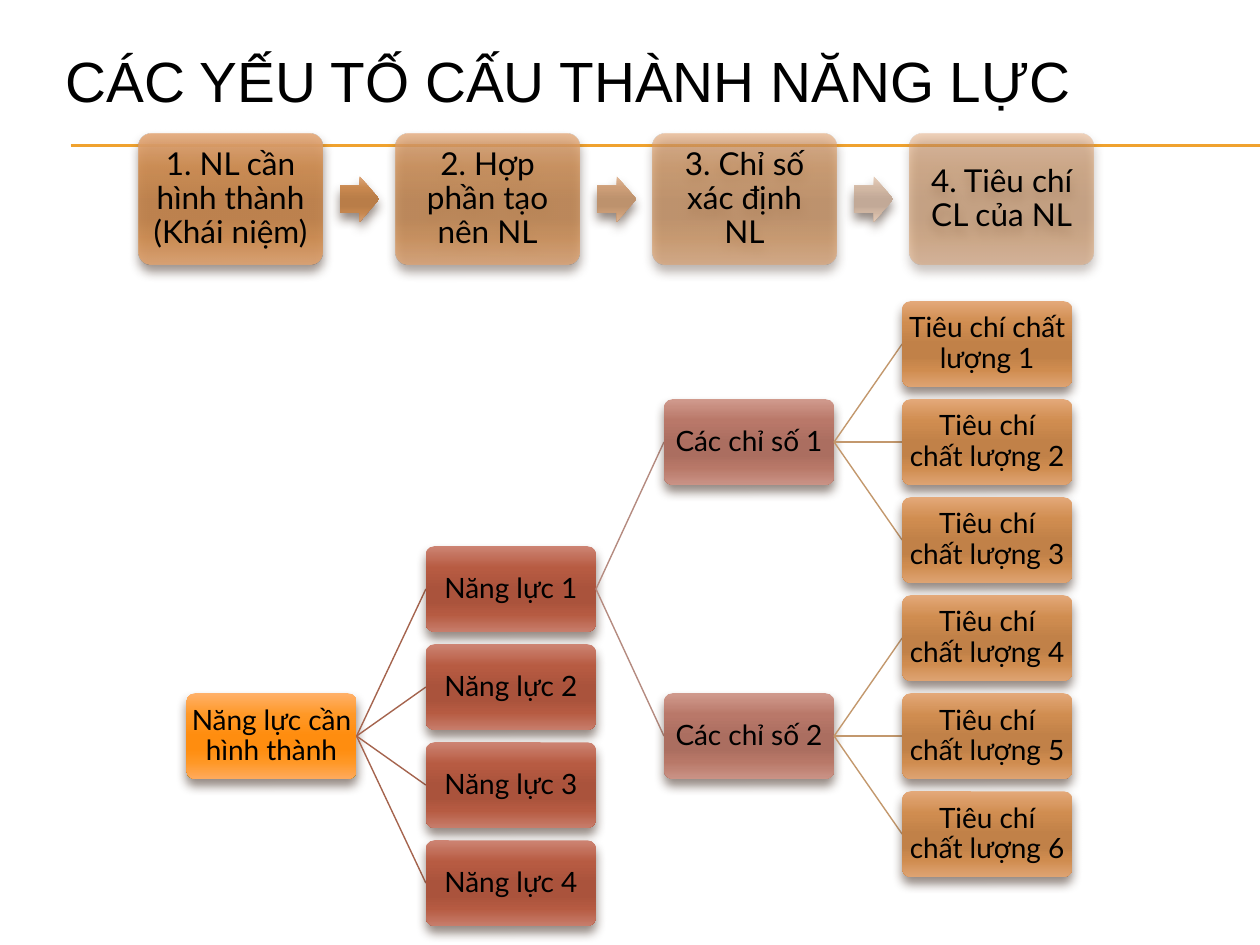
from typing import NamedTuple

from pptx import Presentation
from pptx.dml.color import RGBColor
from pptx.enum.shapes import MSO_CONNECTOR as Connector, MSO_SHAPE as Preset
from pptx.enum.text import MSO_ANCHOR as Anchor, PP_ALIGN as Align
from pptx.oxml import parse_xml
from pptx.oxml.ns import nsdecls, qn
from pptx.util import Inches, Pt


class Node(NamedTuple):
    text: str
    row: float
    children: tuple["Node", ...] = ()


class Level(NamedTuple):
    left: float
    colors: str
    link: str  # colour of the lines that lead into this level


class Step(NamedTuple):
    text: str
    opacity: int
    arrow: str  # gradient of the arrow that follows the step


STOPS = (0, 25, 50, 65, 80, 100)
TAN = "E4A97A D08D50 C18148 C18148 CF8C4F DEA372"

# Competency tree, placed on a grid of rows
NODE_W, NODE_H = 1.35, 0.68
TREE_TOP = 2.39
ROW_PITCH = (6.28 - TREE_TOP) / 5
LEVELS = (
    Level(1.48, "FFB16A FF9826 FF8D0F FF8D0F FF9724 FFAA5C", ""),
    Level(3.38, "CD8473 B75B42 AA533C AA533C B65B42 C77D6B", "A5644E"),
    Level(5.27, "D09A8D B97869 AB6E60 AB6E60 B87868 CA9386", "B58B80"),
    Level(7.16, TAN, "C3986D"),
)


def criteria(first: int) -> tuple[Node, ...]:
    """Three quality criteria; all but number 1 break after 'Tiêu chí'."""
    return tuple(
        Node(f"Tiêu chí{' ' if number == 1 else chr(11)}chất lượng {number}", number - 1)
        for number in range(first, first + 3)
    )


INDICATORS = (Node("Các chỉ số 1", 1, criteria(1)), Node("Các chỉ số 2", 4, criteria(4)))
TREE = Node("Năng lực cần hình thành", 4, (
    Node("Năng lực 1", 2.5, INDICATORS),
    *(Node(f"Năng lực {number}", number + 1.5) for number in (2, 3, 4)),
))

# Row of steps
STEP_LEFT, STEP_TOP, STEP_PITCH = 1.1, 1.06, 2.04
STEPS = (
    Step("1. NL cần hình thành (Khái niệm)", 90, "DCA67A C8884F B97D48 B97D48 C6874E D69F72"),
    Step("2. Hợp phần tạo nên NL", 77, "E2B998 CD9E78 BD926D BD926D CB9D77 DCB291"),
    Step("3. Chỉ số xác định NL", 63, "E7CFBD D2B8A4 C2A997 C2A997 D1B7A3 E1C9B7"),
    Step("4. Tiêu chí CL của NL", 50, ""),
)


def rgb(color: str) -> RGBColor:
    return RGBColor.from_string(color)


def write(shape, text: str, *, size: float, font: str = "Lato", inset: float = 0.1,
          align=Align.CENTER, spacing: float = 0.9) -> None:
    frame = shape.text_frame
    frame.word_wrap = True
    frame.vertical_anchor = Anchor.MIDDLE
    frame.margin_left = frame.margin_right = Inches(inset)
    frame.margin_top = frame.margin_bottom = Inches(min(inset, 0.07))
    para = frame.paragraphs[0]
    para.text = text
    para.alignment = align
    para.line_spacing = spacing
    for span in para.runs:
        span.font.size = Pt(size)
        span.font.name = font
        span.font.color.rgb = rgb("000000")


def add_glossy(slide, preset, left: float, top: float, width: float, height: float,
               colors: str, *, opacity: int = 100, adjust: tuple[float, ...] = (0.1,)):
    """Add a shape with a vertical gradient and a soft shadow below it."""
    shape = slide.shapes.add_shape(
        preset, Inches(left), Inches(top), Inches(width), Inches(height))
    for index, value in enumerate(adjust):
        shape.adjustments[index] = value
    shape.fill.gradient()
    shape.fill.gradient_angle = 270
    shape.line.fill.background()
    properties = shape._element.spPr
    stops = properties.find(qn("a:gradFill")).find(qn("a:gsLst"))
    for stop in list(stops):
        stops.remove(stop)
    for position, color in zip(STOPS, colors.split()):
        stops.append(parse_xml(
            f'<a:gs {nsdecls("a")} pos="{position * 1000}"><a:srgbClr val="{color}">'
            f'<a:alpha val="{opacity * 1000}"/></a:srgbClr></a:gs>'))
    properties.append(parse_xml(
        f'<a:effectLst {nsdecls("a")}><a:outerShdw blurRad="{Pt(6)}" dist="{Pt(4)}" '
        'dir="5400000" rotWithShape="0"><a:srgbClr val="4E3B30"><a:alpha val="60000"/>'
        '</a:srgbClr></a:outerShdw></a:effectLst>'))
    return shape


def add_line(slide, x1: float, y1: float, x2: float, y2: float,
             color: str, width: float) -> None:
    line = slide.shapes.add_connector(
        Connector.STRAIGHT, Inches(x1), Inches(y1), Inches(x2), Inches(y2))
    line.line.color.rgb = rgb(color)
    line.line.width = Pt(width)
    line._element.spPr.append(parse_xml(f'<a:effectLst {nsdecls("a")}/>'))


def row_top(row: float) -> float:
    return TREE_TOP + row * ROW_PITCH


def draw_node(slide, node: Node, depth: int = 0) -> None:
    level = LEVELS[depth]
    top = row_top(node.row)
    box = add_glossy(slide, Preset.ROUNDED_RECTANGLE, level.left, top,
                     NODE_W, NODE_H, level.colors)
    write(box, node.text, size=16, inset=0.01)
    for child in node.children:
        below = LEVELS[depth + 1]
        add_line(slide, level.left + NODE_W, top + NODE_H / 2,
                 below.left, row_top(child.row) + NODE_H / 2, below.link, 0.79)
        draw_node(slide, child, depth + 1)


def draw_steps(slide) -> None:
    for index, step in enumerate(STEPS):
        left = STEP_LEFT + index * STEP_PITCH
        box = add_glossy(slide, Preset.ROUNDED_RECTANGLE, left, STEP_TOP, 1.46, 1.04,
                         TAN, opacity=step.opacity)
        write(box, step.text, size=18, inset=0.07)
        if step.arrow:
            add_glossy(slide, Preset.RIGHT_ARROW, left + 1.6, 1.4, 0.31, 0.36,
                       step.arrow, adjust=(0.6, 0.5))


def main() -> None:
    deck = Presentation()
    deck.slide_width, deck.slide_height = Inches(10), Inches(7.5)
    slide = deck.slides.add_slide(deck.slide_layouts[6])

    # Double rule and title
    for y in (1.15, 1.16):
        add_line(slide, 0.56, y, 10, y, "F0A22E", 0.75)
    title = slide.shapes.add_textbox(Inches(0.42), Inches(0.24), Inches(9.08), Inches(0.78))
    write(title, "CÁC YẾU TỐ CẤU THÀNH NĂNG LỰC", size=32.4, font="Arial",
          align=Align.LEFT, spacing=1.0)

    draw_node(slide, TREE)
    draw_steps(slide)
    deck.save("out.pptx")


if __name__ == "__main__":
    main()
